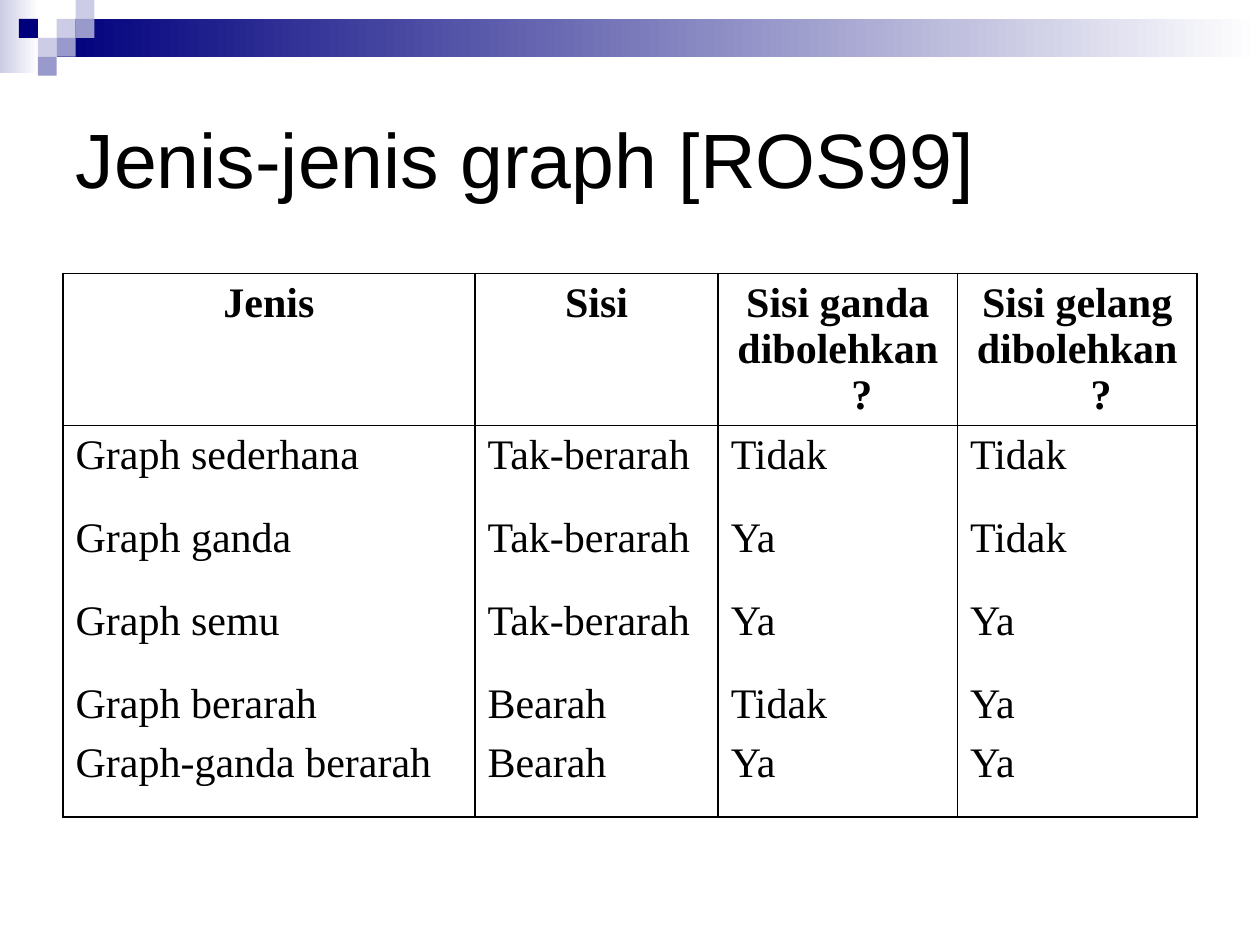
from lxml import etree
from pptx import Presentation
from pptx import util as u
from pptx.dml.color import RGBColor
from pptx.enum import shapes, text
from pptx.oxml.ns import qn
from pptx.util import Inches

COLORS = {"ink": "000000", "navy": "00007D", "violet": "9999CC",
          "lilac": "CCCCE6", "white": "FFFFFF"}
SQUARE = 0.15
# column and row on the corner grid, colour
SQUARES = [(3, 1, "lilac"), (4, 0, "lilac"), (4, 1, "violet"), (2, 2, "lilac"),
           (1, 1, "navy"), (3, 2, "violet"), (2, 3, "violet")]

COLUMN_WIDTHS = [3.27, 1.93, 1.9, 1.9]
ROW_HEIGHTS = [0.88, 0.66, 0.66, 0.66, 0.39, 0.66]
ROWS = [
    ["Jenis", "Sisi", "Sisi ganda\ndibolehkan?", "Sisi gelang\ndibolehkan?"],
    ["Graph sederhana", "Tak-berarah", "Tidak", "Tidak"],
    ["Graph ganda", "Tak-berarah", "Ya", "Tidak"],
    ["Graph semu", "Tak-berarah", "Ya", "Ya"],
    ["Graph berarah", "Bearah", "Tidak", "Ya"],
    ["Graph-ganda berarah", "Bearah", "Ya", "Ya"],
]


def rgb(name):
    return RGBColor.from_string(COLORS[name])


def set_font(p, name, size, bold=False):
    p.font.name, p.font.size, p.font.bold = name, u.Pt(size), bold
    p.font.color.rgb = rgb("ink")


def add_block(s, x, y, w, h, color, fade_to=None):
    """Add a borderless rectangle, plain or fading from left to right."""
    sp = s.shapes.add_shape(shapes.MSO_SHAPE.RECTANGLE,
                            Inches(x), Inches(y), Inches(w), Inches(h))
    sp.shadow.inherit = False
    sp.line.fill.background()
    if fade_to:
        sp.fill.gradient()
        sp.fill.gradient_angle = 0
        for stop, name in zip(sp.fill.gradient_stops, (color, fade_to)):
            stop.color.rgb = rgb(name)
    else:
        sp.fill.solid()
        sp.fill.fore_color.rgb = rgb(color)


def add_header_band(s, x, y, w):
    add_block(s, x, y, 0.31, 0.58, "lilac", "white")
    add_block(s, x + 3 * SQUARE, y + SQUARE, w - 3 * SQUARE, 2 * SQUARE, "navy", "white")
    for col, row, color in SQUARES:
        add_block(s, x + col * SQUARE, y + row * SQUARE, SQUARE, SQUARE, color)


def set_title(s, x, y, w, h, words):
    sp = s.shapes.title
    sp.left, sp.top, sp.width, sp.height = map(Inches, (x, y, w, h))
    tf = sp.text_frame
    tf.text = words
    tf.vertical_anchor = text.MSO_ANCHOR.MIDDLE
    p = tf.paragraphs[0]
    p.alignment = text.PP_ALIGN.LEFT
    set_font(p, "Arial", 44)


def set_borders(cell, sides):
    """Draw 1 pt lines on the sides named by L, R, T and B; clear the others."""
    tc_pr = cell._tc.get_or_add_tcPr()
    for side in "LRTB":
        ln = etree.SubElement(tc_pr, qn(f"a:ln{side}"), w=str(u.Pt(1)))
        if side in sides:
            fill = etree.SubElement(ln, qn("a:solidFill"))
            etree.SubElement(fill, qn("a:srgbClr"), val=COLORS["ink"])
        else:
            etree.SubElement(ln, qn("a:noFill"))


def fill_cell(cell, words, header):
    cell.text = words
    for p in cell.text_frame.paragraphs:
        p.alignment = text.PP_ALIGN.CENTER if header else text.PP_ALIGN.JUSTIFY
        set_font(p, "Times New Roman", 24, header)
        p_pr = p._p.get_or_add_pPr()
        p_pr.set("marL", str(Inches(0.38)))
        p_pr.set("indent", str(Inches(-0.38)))


def add_graph_table(s, x, y):
    frame = s.shapes.add_table(len(ROWS), len(COLUMN_WIDTHS), Inches(x), Inches(y),
                               Inches(sum(COLUMN_WIDTHS)), Inches(sum(ROW_HEIGHTS)))
    table = frame.table
    table.first_row = table.horz_banding = False
    for column, width in zip(table.columns, COLUMN_WIDTHS):
        column.width = Inches(width)
    for i, (row, height) in enumerate(zip(table.rows, ROW_HEIGHTS)):
        row.height = Inches(height)
        sides = "LR" + ("T" if i < 2 else "") + ("B" if i in (0, len(ROWS) - 1) else "")
        for cell, words in zip(row.cells, ROWS[i]):
            fill_cell(cell, words, header=i == 0)
            set_borders(cell, sides)
            cell.fill.background()


def main():
    prs = Presentation()
    prs.slide_width, prs.slide_height = Inches(10), Inches(7.5)
    s = prs.slides.add_slide(prs.slide_layouts[5])
    add_header_band(s, 0, 0, 10)
    set_title(s, 0.5, 0.5, 9, 1.5, "Jenis-jenis graph [ROS99]")
    add_graph_table(s, 0.5, 2.17)
    prs.save("out.pptx")


if __name__ == "__main__":
    main()
